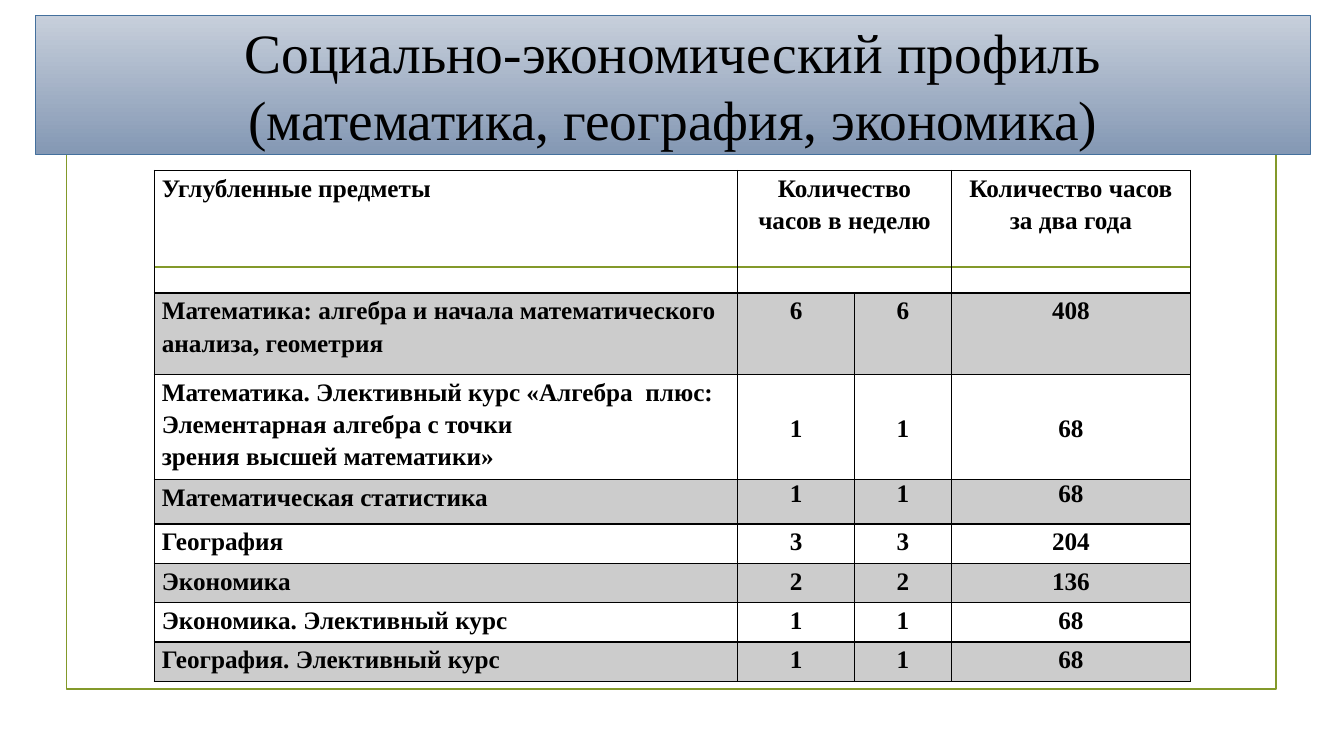
from lxml import etree
from pptx import Presentation
from pptx.dml.color import RGBColor
from pptx.enum.shapes import MSO_CONNECTOR, MSO_SHAPE
from pptx.enum.text import MSO_ANCHOR, PP_ALIGN
from pptx.oxml import parse_xml
from pptx.oxml.ns import nsdecls, qn
from pptx.util import Pt

BLACK = RGBColor(0x00, 0x00, 0x00)
OLIVE = RGBColor(0x83, 0x99, 0x2A)
BAND_GREY = RGBColor(0xCC, 0xCC, 0xCC)
BANNER_TOP = RGBColor(0xC7, 0xCF, 0xDB)
BANNER_BOTTOM = RGBColor(0x84, 0x98, 0xB4)
BANNER_EDGE = RGBColor(0x44, 0x70, 0x9D)
FONT = "Times New Roman"

TITLE = ["Социально-экономический профиль", "(математика, география, экономика)"]
HEADINGS = ["Углубленные предметы", "Количество часов в неделю", "", "Количество часов за два года"]
# Subject paragraphs, weekly hours in each year, hours over two years
SUBJECTS = [
    (["Математика: алгебра и начала математического анализа, геометрия"], 6, 408),
    (["Математика. Элективный курс «Алгебра  плюс: Элементарная алгебра с точки",
      "зрения высшей математики»"], 1, 68),
    (["Математическая статистика"], 1, 68),
    (["География"], 3, 204),
    (["Экономика"], 2, 136),
    (["Экономика. Элективный курс"], 1, 68),
    (["География. Элективный курс"], 1, 68),
]
COLUMN_WIDTHS = [416.7, 83.5, 69.2, 170.8]
ROW_HEIGHTS = [87.8, 58.3, 74.9, 31.7, 28.1, 28.1, 28.1, 28.1]
ELECTIVE_ROW, STATISTICS_ROW = 2, 3


def add_run(paragraph, text, size, bold=False):
    run = paragraph.add_run()
    run.text = text
    run.font.name, run.font.size, run.font.bold = FONT, Pt(size), bold
    run.font.color.rgb = BLACK


def add_frame(slide, left, top, width, height):
    """Olive page frame with the rule that crosses the table header."""
    frame = slide.shapes.add_shape(MSO_SHAPE.RECTANGLE, Pt(left), Pt(top), Pt(width), Pt(height))
    frame.shadow.inherit = False
    frame.fill.background()
    rule_y = Pt(top + 142.6)
    rule = slide.shapes.add_connector(
        MSO_CONNECTOR.STRAIGHT, Pt(left + 62.6), rule_y, Pt(left + 802.8), rule_y)
    etree.SubElement(rule._element.spPr, qn("a:effectLst"))
    for outline in (frame.line, rule.line):
        outline.color.rgb = OLIVE
        outline.width = Pt(1.25)


def add_banner(slide, left, top, width, height):
    """Gradient banner with the two-line title."""
    banner = slide.shapes.add_shape(MSO_SHAPE.RECTANGLE, Pt(left), Pt(top), Pt(width), Pt(height))
    banner.shadow.inherit = False
    banner.fill.gradient()
    banner.fill.gradient_angle = 270
    for stop, color, position in zip(banner.fill.gradient_stops, (BANNER_TOP, BANNER_BOTTOM), (0, 1)):
        stop.color.rgb = color
        stop.position = position
    banner.line.color.rgb = BANNER_EDGE
    banner.line.width = Pt(0.75)
    frame = banner.text_frame
    frame.word_wrap = True
    frame.vertical_anchor = MSO_ANCHOR.MIDDLE
    title = frame.paragraphs[0]
    title.alignment = PP_ALIGN.CENTER
    add_run(title, TITLE[0], 39.6)
    title.add_line_break()
    add_run(title, TITLE[1], 39.6)


def set_borders(cell, bottom_width):
    properties = cell._tc.get_or_add_tcPr()
    widths = {"lnL": 1, "lnR": 1, "lnT": 1, "lnB": bottom_width}
    for index, (side, width) in enumerate(widths.items()):
        properties.insert(index, parse_xml(
            f'<a:{side} {nsdecls("a")} w="{Pt(width)}"><a:solidFill>'
            f'<a:srgbClr val="{BLACK}"/></a:solidFill></a:{side}>'))


def fill_cell(cell, paragraphs, row, column):
    cell.margin_left = cell.margin_right = Pt(5.4)
    cell.margin_top = cell.margin_bottom = 0
    if row % 2:
        cell.fill.solid()
        cell.fill.fore_color.rgb = BAND_GREY
    else:
        cell.fill.background()
    set_borders(cell, 1 if row else 2)
    if row == ELECTIVE_ROW and column:
        cell.vertical_anchor = MSO_ANCHOR.MIDDLE
    for index, text in enumerate(paragraphs):
        paragraph = cell.text_frame.add_paragraph() if index else cell.text_frame.paragraphs[0]
        paragraph.alignment = PP_ALIGN.CENTER if column else PP_ALIGN.LEFT
        paragraph.line_spacing = 1.0 if row == STATISTICS_ROW and column else 1.15
        if text:
            add_run(paragraph, text, 18, bold=True)


def add_hours_table(slide, left, top):
    """Table of subjects and their hours."""
    table = slide.shapes.add_table(
        len(ROW_HEIGHTS), len(COLUMN_WIDTHS), Pt(left), Pt(top),
        Pt(sum(COLUMN_WIDTHS)), Pt(sum(ROW_HEIGHTS))).table
    table.first_row = table.horz_banding = False
    for column, width in zip(table.columns, COLUMN_WIDTHS):
        column.width = Pt(width)
    for row, height in zip(table.rows, ROW_HEIGHTS):
        row.height = Pt(height)
    contents = [[[heading] for heading in HEADINGS]]
    for subject, weekly, total in SUBJECTS:
        contents.append([subject, [str(weekly)], [str(weekly)], [str(total)]])
    for row, cells in enumerate(contents):
        for column, paragraphs in enumerate(cells):
            fill_cell(table.cell(row, column), paragraphs, row, column)
    table.cell(0, 1).merge(table.cell(0, 2))


def main():
    presentation = Presentation()
    presentation.slide_width, presentation.slide_height = Pt(960), Pt(540)
    slide = presentation.slides.add_slide(presentation.slide_layouts[6])
    add_frame(slide, 47.5, 48.2, 864, 444.2)
    add_banner(slide, 25.2, 10.8, 910.8, 99.4)
    add_hours_table(slide, 110.2, 121.7)
    presentation.save("out.pptx")


if __name__ == "__main__":
    main()
